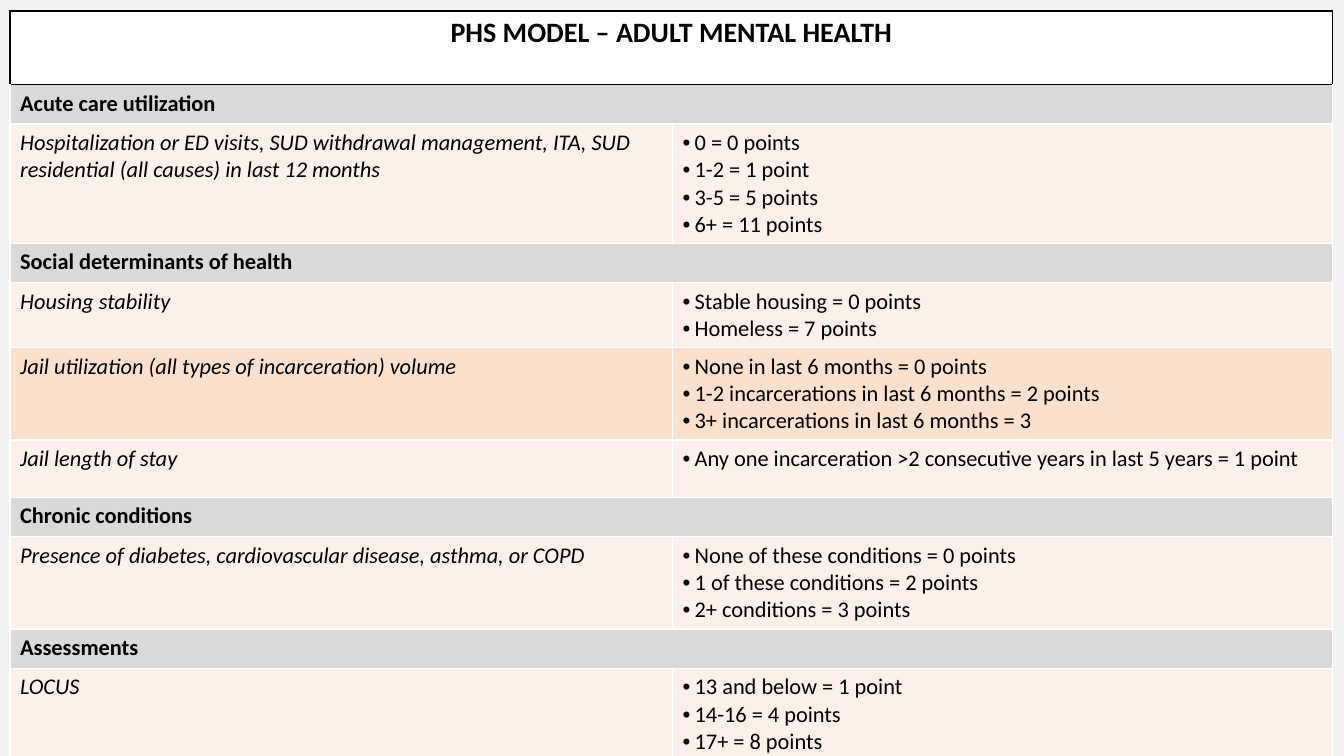
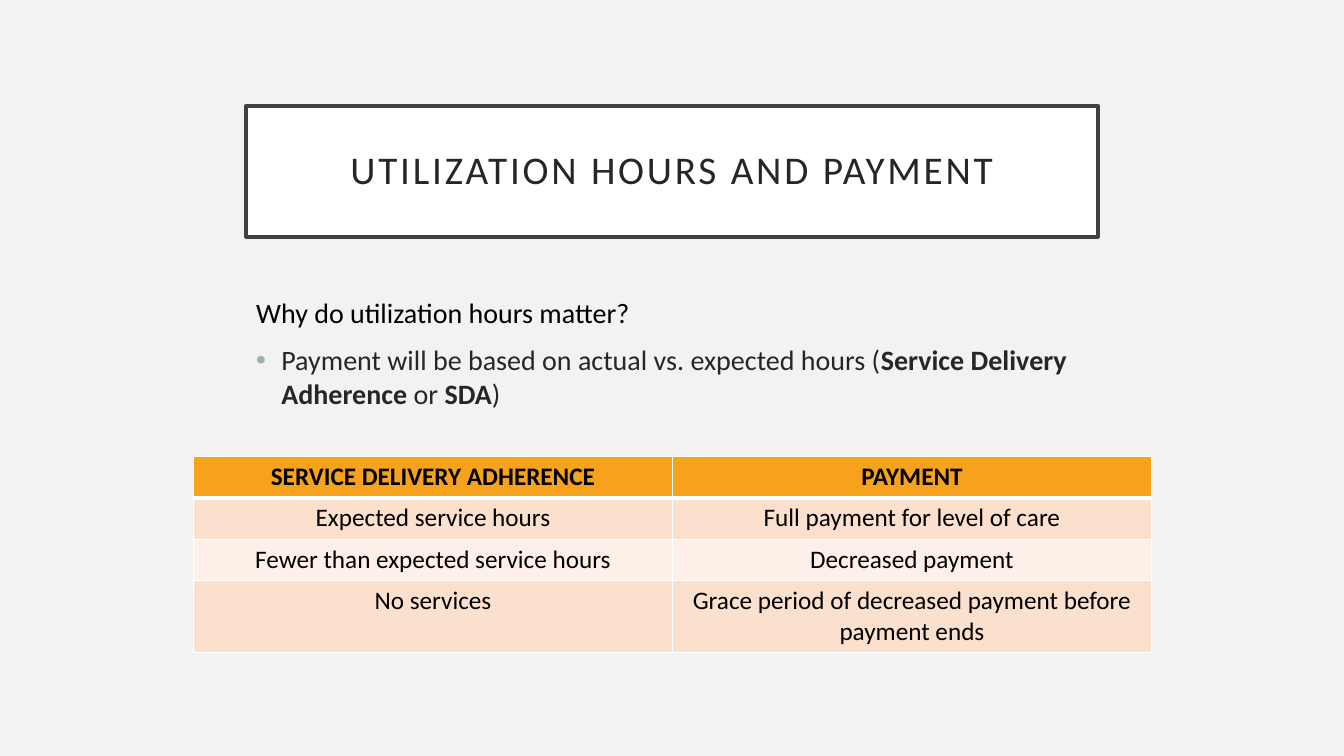
from pptx import Presentation
from pptx.dml.color import RGBColor
from pptx.enum.text import MSO_ANCHOR, MSO_AUTO_SIZE, PP_ALIGN
from pptx.oxml.ns import qn
from pptx.util import Inches, Pt
from lxml import etree

CENTER, LEFT = PP_ALIGN.CENTER, PP_ALIGN.LEFT
TOP, MIDDLE = MSO_ANCHOR.TOP, MSO_ANCHOR.MIDDLE
FIXED = MSO_AUTO_SIZE.NONE

BLACK = RGBColor(0x00, 0x00, 0x00)
WHITE = RGBColor(0xFF, 0xFF, 0xFF)
PAPER = RGBColor(0xF2, 0xF2, 0xF2)
INK = RGBColor(0x26, 0x26, 0x26)
FRAME = RGBColor(0x40, 0x40, 0x40)
GRAY = RGBColor(0xD9, 0xD9, 0xD9)
ORANGE = RGBColor(0xF6, 0xA2, 0x1D)
PEACH = RGBColor(0xFB, 0xE0, 0xCD)
CREAM = RGBColor(0xFD, 0xF0, 0xE8)
STEEL = RGBColor(0x9B, 0xAF, 0xB5)

FONT = "Calibri"
THIN, THICK, EDGE = (WHITE, 1), (WHITE, 3), (BLACK, 1)
BLANK, CONTENT = 6, 1

# Each section: heading, then (measure, scores) rows with their heights
SECTIONS = [
    ("Acute care utilization", [
        ("Hospitalization or ED visits, SUD withdrawal management, ITA, SUD "
         "residential (all causes) in last 12 months",
         ["0 = 0 points", "1-2 = 1 point", "3-5 = 5 points",
          "6+ = 11 points"], 1.15)]),
    ("Social determinants of health", [
        ("Housing stability",
         ["Stable housing = 0 points", "Homeless = 7 points"], 0.62),
        ("Jail utilization (all types of incarceration) volume",
         ["None in last 6 months = 0 points",
          "1-2 incarcerations in last 6 months = 2 points",
          "3+ incarcerations in last 6 months = 3"], 0.89),
        ("Jail length of stay",
         ["Any one incarceration >2 consecutive years in last 5 years "
          "= 1 point"], 0.57)]),
    ("Chronic conditions", [
        ("Presence of diabetes, cardiovascular disease, asthma, or COPD",
         ["None of these conditions = 0 points",
          "1 of these conditions = 2 points",
          "2+ conditions = 3 points"], 0.89)]),
    ("Assessments", [
        ("LOCUS",
         ["13 and below = 1 point", "14-16 = 4 points",
          "17+ = 8 points"], 0.89)]),
]

PAYMENTS = [
    ("SERVICE DELIVERY ADHERENCE", "PAYMENT"),
    ("Expected service hours", "Full payment for level of care"),
    ("Fewer than expected service hours", "Decreased payment"),
    ("No services", "Grace period of decreased payment before payment ends"),
]


def put(item, **values):
    for name, value in values.items():
        setattr(item, name, value)


def band(row):
    return PEACH if row % 2 else CREAM


class Deck:
    def __init__(self):
        self.prs = Presentation()
        put(self.prs, slide_width=Inches(13.33), slide_height=Inches(7.5))
        self.fill(self.prs.slide_master.background, PAPER)
        self.slide = None

    def add(self, layout):
        self.slide = self.prs.slides.add_slide(self.prs.slide_layouts[layout])

    def fill(self, item, color):
        item.fill.solid()
        item.fill.fore_color.rgb = color

    def place(self, shape, left, top, width, height):
        put(shape, left=Inches(left), top=Inches(top),
            width=Inches(width), height=Inches(height))

    def run(self, para, text, size, color=BLACK, **style):
        run = para.add_run()
        run.text = text
        put(run.font, name=FONT, size=Pt(size), **style)
        run.font.color.rgb = color
        return run

    def bullet(self, para, indent, color=None):
        """Hang a dot by indent inches; an indent of 0 means no bullet."""
        props = para._p.get_or_add_pPr()
        props.set("marL", str(Inches(indent)))
        props.set("indent", str(-Inches(indent)))
        if not indent:
            etree.SubElement(props, qn("a:buNone"))
            return
        if color is not None:
            tint = etree.SubElement(props, qn("a:buClr"))
            etree.SubElement(tint, qn("a:srgbClr"), val=str(color))
        etree.SubElement(props, qn("a:buFont"), typeface="Arial")
        etree.SubElement(props, qn("a:buChar"), char="•")

    def title(self, text, box):
        shape = self.slide.shapes.title
        self.place(shape, *box)
        self.fill(shape, WHITE)
        shape.line.color.rgb = FRAME
        shape.line.width = Pt(2.5)
        frame, pad = shape.text_frame, Inches(0.2)
        put(frame, margin_left=pad, margin_right=pad, margin_top=pad,
            margin_bottom=pad, vertical_anchor=MIDDLE, word_wrap=True,
            auto_size=FIXED)
        para = frame.paragraphs[0]
        put(para, alignment=CENTER, line_spacing=0.9)
        run = self.run(para, text, 28, INK)
        run._r.get_or_add_rPr().set("spc", "200")

    def body(self, box, items):
        """Fill the body from (indent, color, [(text, bold), ...]) items."""
        shape = self.slide.placeholders[1]
        self.place(shape, *box)
        frame = shape.text_frame
        put(frame, vertical_anchor=TOP, word_wrap=True, auto_size=FIXED)
        for i, (indent, color, parts) in enumerate(items):
            para = frame.add_paragraph() if i else frame.paragraphs[0]
            put(para, alignment=LEFT, space_before=Pt(10))
            self.bullet(para, indent, STEEL)
            for text, bold in parts:
                self.run(para, text, 20, color, bold=bold)

    def table(self, left, top, cols, rows):
        frame = self.slide.shapes.add_table(
            len(rows), len(cols), Inches(left), Inches(top),
            Inches(sum(cols)), Inches(sum(rows)))
        table = frame.table
        put(table, first_row=False, horz_banding=False)
        for col, width in zip(table.columns, cols):
            col.width = Inches(width)
        for row, height in zip(table.rows, rows):
            row.height = Inches(height)
        return table

    def border(self, cell, side=THIN, top=THIN, bottom=THIN):
        props = cell._tc.get_or_add_tcPr()
        edges = {"L": side, "R": side, "T": top, "B": bottom}
        for name, (color, width) in edges.items():
            line = etree.SubElement(props, qn("a:ln" + name),
                                    w=str(Pt(width)))
            solid = etree.SubElement(line, qn("a:solidFill"))
            etree.SubElement(solid, qn("a:srgbClr"), val=str(color))

    def cell(self, cell, lines, color, size=16, align=LEFT, dots=False,
             edges=None, **style):
        self.border(cell, **(edges or {}))
        self.fill(cell, color)
        frame = cell.text_frame
        for i, text in enumerate(lines):
            para = frame.add_paragraph() if i else frame.paragraphs[0]
            para.alignment = align
            if dots:
                self.bullet(para, 0.12)
            self.run(para, text, size, **style)

    def span(self, table, row, text, color, **style):
        """Write one cell across the whole row."""
        first, last = table.cell(row, 0), table.cell(row, 1)
        first.merge(last)
        self.cell(first, [text], color, bold=True, **style)
        self.cell(last, [], color, edges=style.get("edges"))


def model(deck):
    deck.add(BLANK)
    heights = [0.73]
    for _, items in SECTIONS:
        heights += [0.39] + [height for _, _, height in items]
    table = deck.table(0.1, 0.11, [6.57, 6.55], heights)
    deck.span(table, 0, "PHS MODEL – ADULT MENTAL HEALTH", WHITE, size=20,
              align=CENTER, edges=dict(side=EDGE, top=EDGE, bottom=EDGE))
    row = 1
    for head, items in SECTIONS:
        deck.span(table, row, head, GRAY,
                  edges=dict(top=EDGE if row == 1 else THIN))
        for row, (name, scores, _) in enumerate(items, row + 1):
            deck.cell(table.cell(row, 0), [name], band(row), italic=True)
            deck.cell(table.cell(row, 1), scores, band(row), dots=True)
        row += 1


def payment(deck):
    deck.add(CONTENT)
    deck.title("UTILIZATION HOURS AND PAYMENT", (2.44, 1.05, 8.45, 1.3))
    deck.body((2.44, 2.88, 8.45, 3.86), [
        (0, BLACK, [("Why do utilization hours matter?", False)]),
        (0.25, INK, [
            ("Payment will be based on actual vs. expected hours (", False),
            ("Service Delivery Adherence ", True), ("or ", False),
            ("SDA", True), (")", False)]),
    ])
    table = deck.table(1.92, 4.53, [4.75] * 2, [0.41] * 3 + [0.69])
    for row, texts in enumerate(PAYMENTS):
        head = row == 0
        edges = dict(top=THICK if row == 1 else THIN,
                     bottom=THICK if head else THIN)
        for col, text in enumerate(texts):
            deck.cell(table.cell(row, col), [text],
                      ORANGE if head else band(row), size=18, align=CENTER,
                      edges=edges, bold=head)


def main():
    deck = Deck()
    model(deck)
    payment(deck)
    deck.prs.save("out.pptx")


if __name__ == "__main__":
    main()
